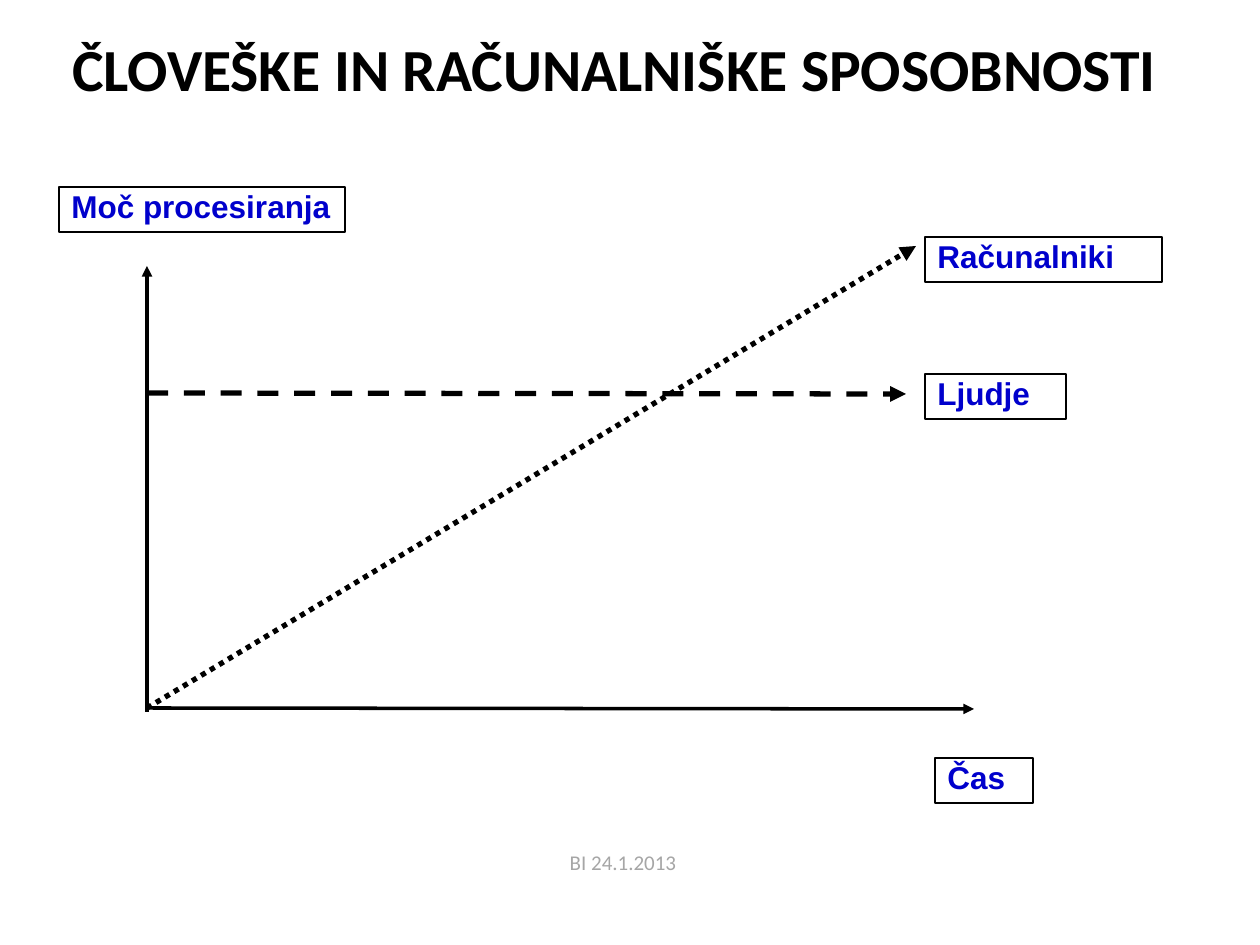
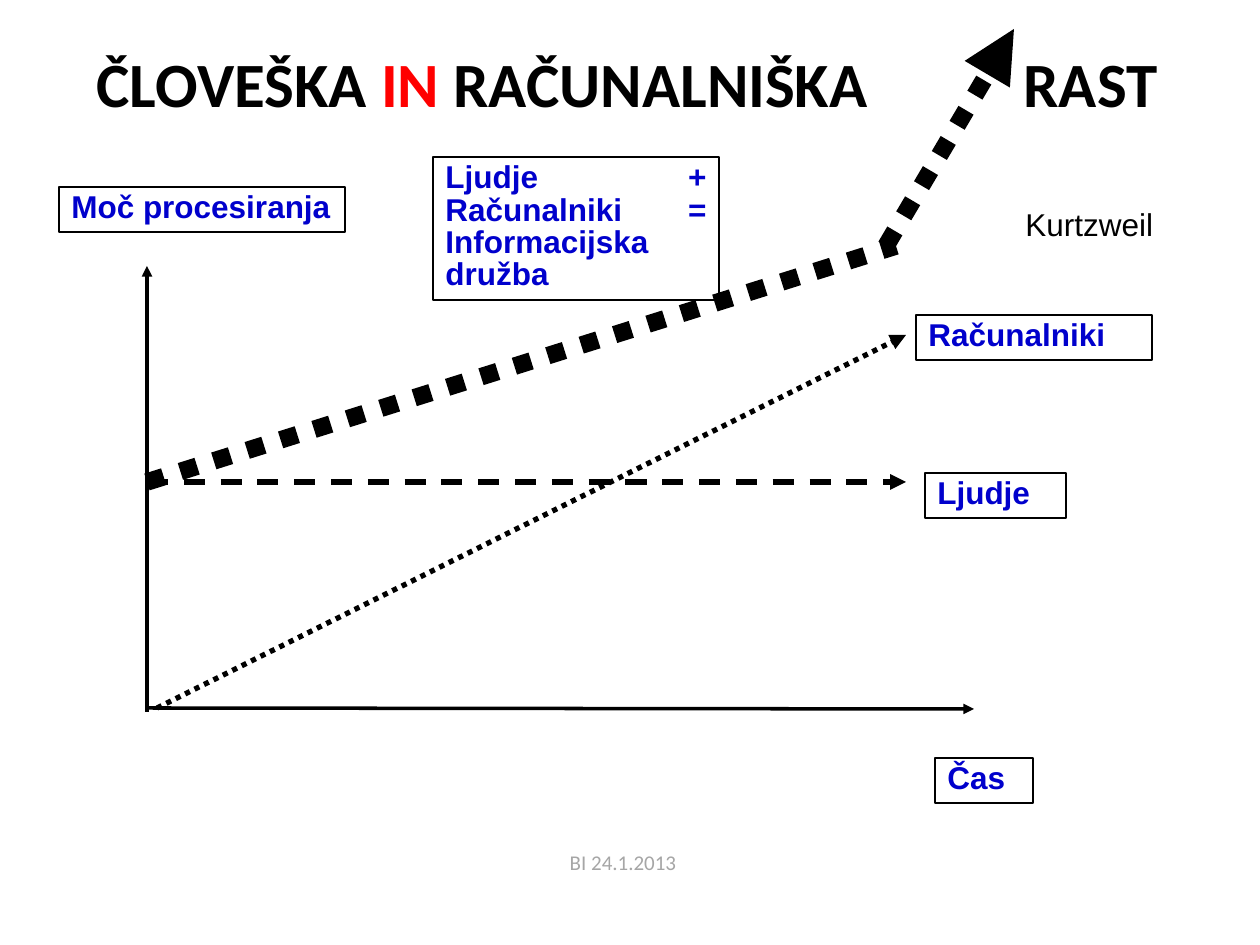
from dataclasses import dataclass

from lxml import etree
from pptx import Presentation
from pptx import util as u
from pptx.dml.color import RGBColor
from pptx.enum import dml, shapes, text
from pptx.oxml import ns

PX = 914400 / 126


@dataclass(frozen=True)
class Theme:
    """Colours, fonts and type sizes shared by the slides."""
    ink: str = "000000"
    label: str = "0000CC"
    accent: str = "FF0000"
    paper: str = "FFFFFF"
    muted: str = "A6A6A6"
    heading_font: str = "Calibri"
    label_font: str = "Arial"
    label_size: int = 18
    footer_size: int = 12


THEME = Theme()
ALIGN = text.PP_ALIGN
DOTS = dml.MSO_LINE.ROUND_DOT
DASHES = dml.MSO_LINE.DASH
ORIGIN_X, AXIS_Y = 147, 708


def px(*lengths):
    """Turn px lengths into EMU."""
    return [u.Emu(round(length * PX)) for length in lengths]


def rgb(colour):
    """Return the RGB value of a hex colour."""
    return RGBColor.from_string(colour)


def write(frame, content, font=THEME.label_font, size=THEME.label_size, colour=THEME.ink,
          bold=False, align=ALIGN.LEFT, anchor=text.MSO_ANCHOR.TOP, wrap=True,
          leading=None, before=None, tab=None):
    """Fill a text frame with a string or with (string, colour) runs."""
    frame.auto_size = text.MSO_AUTO_SIZE.NONE
    frame.word_wrap = wrap
    frame.vertical_anchor = anchor
    paragraph = frame.paragraphs[0]
    paragraph.alignment = align
    if leading:
        paragraph.line_spacing = leading
    if before:
        paragraph.space_before = u.Pt(before)
    if tab:
        properties = paragraph._p.get_or_add_pPr()
        stops = etree.SubElement(properties, ns.qn("a:tabLst"))
        etree.SubElement(stops, ns.qn("a:tab"), pos=str(px(tab)[0]), algn="l")
    runs = [(content, colour)] if isinstance(content, str) else content
    for words, run_colour in runs:
        run = paragraph.add_run()
        run.text = words
        run.font.name = font
        run.font.size = u.Pt(size)
        run.font.bold = bold
        run.font.color.rgb = rgb(run_colour)


def add_title(slide, box, content, **style):
    """Place and format the title placeholder."""
    title = slide.shapes.title
    title.left, title.top, title.width, title.height = px(*box)
    write(title.text_frame, content, font=THEME.heading_font, bold=True, **style)


def add_note(slide, box, content, **style):
    """Add plain text without a frame."""
    note = slide.shapes.add_textbox(*px(*box))
    write(note.text_frame, content, **style)


def add_label(slide, left, top, width, content, height=45):
    """Add a framed blue label."""
    label = slide.shapes.add_shape(shapes.MSO_SHAPE.RECTANGLE, *px(left, top, width, height))
    label.shadow.inherit = False
    label.fill.solid()
    label.fill.fore_color.rgb = rgb(THEME.paper)
    label.line.color.rgb = rgb(THEME.ink)
    label.line.width = u.Pt(0.75)
    write(label.text_frame, content, colour=THEME.label, bold=True, align=ALIGN.JUSTIFY,
          leading=0.85, before=0.2 * THEME.label_size)


def add_trend(slide, start, end, weight=3, dash=None, arrow=True):
    """Draw a straight line, with an arrowhead at its end if wanted."""
    trend = slide.shapes.add_connector(shapes.MSO_CONNECTOR.STRAIGHT, *px(*start, *end))
    trend.line.color.rgb = rgb(THEME.ink)
    trend.line.width = u.Pt(weight)
    if dash:
        trend.line.dash_style = dash
    properties = trend.element.spPr
    if arrow:
        outline = properties.find(ns.qn("a:ln"))
        etree.SubElement(outline, ns.qn("a:tailEnd"), type="triangle")
    etree.SubElement(properties, ns.qn("a:effectLst"))


def add_graph_slide(deck):
    """Add a slide with both axes, their labels and the footer."""
    slide = deck.slides.add_slide(deck.slide_layouts[5])
    add_label(slide, 59, 187, 286, "Moč procesiranja")
    add_label(slide, 935, 758, 98, "Čas")
    add_trend(slide, (ORIGIN_X, AXIS_Y), (974, 709), weight=2)
    add_trend(slide, (ORIGIN_X, 712), (ORIGIN_X, 266), weight=2)
    add_note(slide, (354, 843, 538, 65), "BI 24.1.2013", font=THEME.heading_font,
             size=THEME.footer_size, colour=THEME.muted, align=ALIGN.CENTER, wrap=False)
    return slide


def add_abilities(deck):
    """Compare constant human power with growing computer power."""
    slide = add_graph_slide(deck)
    add_title(slide, (54, 0, 1134, 135), "ČLOVEŠKE IN RAČUNALNIŠKE SPOSOBNOSTI ",
              size=34.1, align=ALIGN.CENTER, anchor=text.MSO_ANCHOR.MIDDLE)
    add_trend(slide, (ORIGIN_X, AXIS_Y), (916, 246), dash=DOTS)
    add_trend(slide, (ORIGIN_X, 393), (906, 394), dash=DASHES)
    add_label(slide, 925, 374, 141, "Ljudje")
    add_label(slide, 925, 237, 237, "Računalniki")


def add_growth(deck):
    """Show the joint growth of people and computers."""
    slide = add_graph_slide(deck)
    add_title(slide, (84, 38, 1131, 89),
              [("ČLOVEŠKA ", THEME.ink), ("IN", THEME.accent),
               (" RAČUNALNIŠKA\tRAST", THEME.ink)], size=36, tab=927)
    add_trend(slide, (157, AXIS_Y), (906, 335), dash=DOTS)
    add_trend(slide, (ORIGIN_X, 482), (906, 482), dash=DASHES)
    add_label(slide, 925, 473, 141, "Ljudje")
    add_label(slide, 916, 315, 236, "Računalniki")
    add_label(slide, 433, 157, 286, "Ljudje + Računalniki = Informacijska družba", height=143)
    add_trend(slide, (886, 246), (1014, 29), weight=10, dash=DOTS)
    add_trend(slide, (ORIGIN_X, 482), (896, 246), weight=10, dash=DOTS, arrow=False)
    add_note(slide, (1013, 199, 163, 50), "Kurtzweil")


def main():
    """Build and save the deck."""
    deck = Presentation()
    deck.slide_width, deck.slide_height = px(1260, 945)
    add_abilities(deck)
    add_growth(deck)
    deck.save("out.pptx")


if __name__ == "__main__":
    main()
